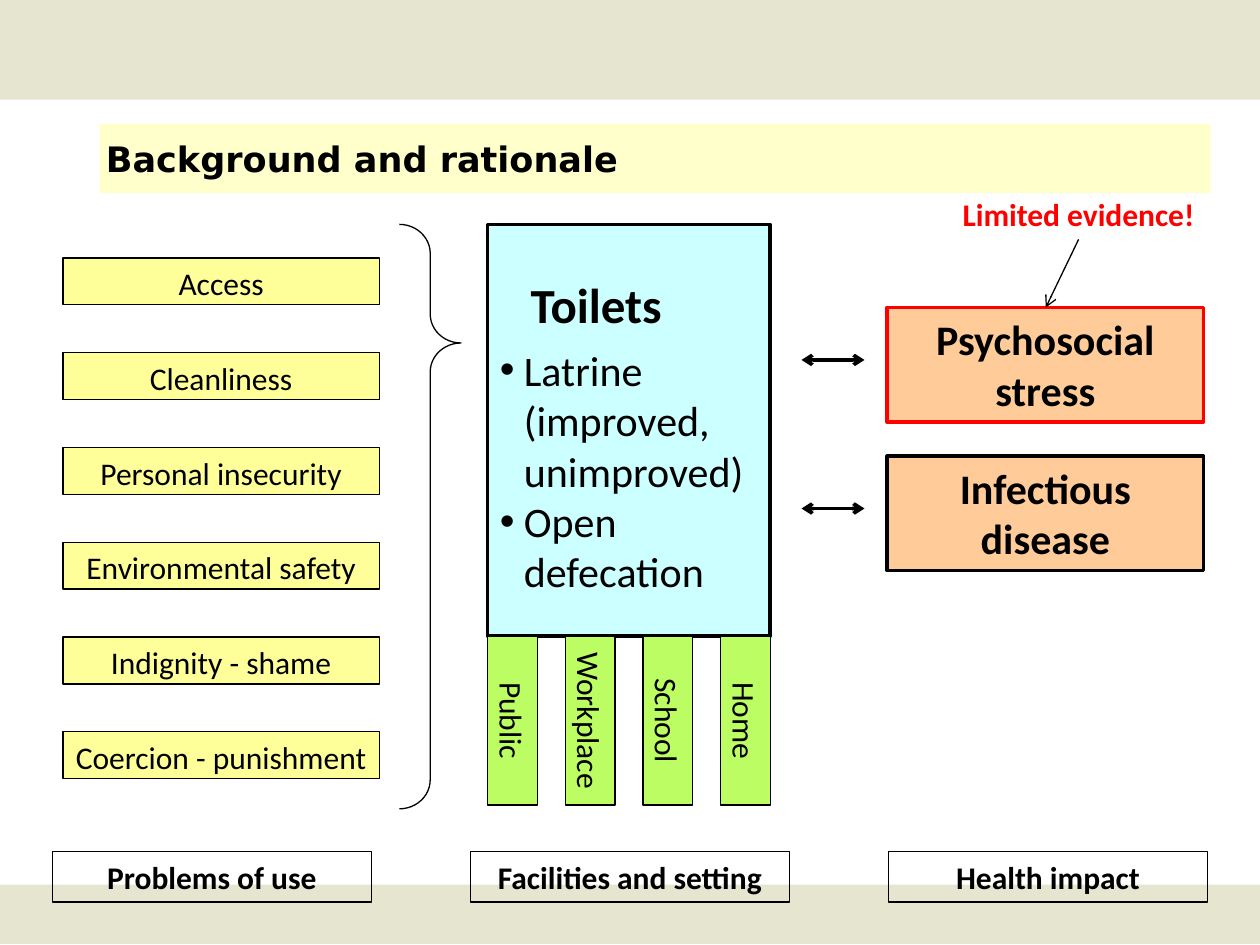
import pptx
import pptx.util
import pptx.dml.color
import pptx.enum.shapes
import pptx.enum.text
import pptx.oxml.ns
import lxml.etree

Pt = pptx.util.Pt
RGBColor = pptx.dml.color.RGBColor
SHAPE = pptx.enum.shapes.MSO_SHAPE
ALIGN = pptx.enum.text.PP_ALIGN
ANCHOR = pptx.enum.text.MSO_ANCHOR
qn = pptx.oxml.ns.qn

BLACK = RGBColor(0x00, 0x00, 0x00)
RED = RGBColor(0xFF, 0x00, 0x00)
BAND = RGBColor(0xE5, 0xE5, 0xD0)
CREAM = RGBColor(0xFF, 0xFF, 0xCC)
YELLOW = RGBColor(0xFF, 0xFF, 0x99)
CYAN = RGBColor(0xCC, 0xFF, 0xFF)
GREEN = RGBColor(0xBB, 0xFD, 0x63)
ORANGE = RGBColor(0xFF, 0xCC, 0x99)


def write(para, text, size=18, bold=False, color=BLACK, font="Calibri",
          align=ALIGN.CENTER, indent=0, bullet=False, after=0):
    """Put formatted text into a paragraph."""
    para.alignment = align
    para.space_after = Pt(after)
    properties = para._p.get_or_add_pPr()
    properties.set("marL", str(Pt(indent)))
    properties.set("indent", str(Pt(-indent if bullet else 0)))
    if bullet:
        lxml.etree.SubElement(properties, qn("a:buFont"), typeface="Arial")
        lxml.etree.SubElement(properties, qn("a:buChar"), char="•")
    span = para.add_run()
    span.text = text
    span.font.name = font
    span.font.size = Pt(size)
    span.font.bold = bold
    span.font.color.rgb = color


def add_panel(page, box, fill=None, line=BLACK, weight=0.75, kind=SHAPE.RECTANGLE):
    shape = page.shapes.add_shape(kind, *map(Pt, box))
    shape.shadow.inherit = False
    if fill is None:
        shape.fill.background()
    else:
        shape.fill.solid()
        shape.fill.fore_color.rgb = fill
    if line is None:
        shape.line.fill.background()
    else:
        shape.line.color.rgb = line
        shape.line.width = Pt(weight)
    return shape


def add_label(page, box, text, fill=None, bold=False):
    shape = add_panel(page, box, fill)
    shape.text_frame.word_wrap = True
    shape.text_frame.vertical_anchor = ANCHOR.TOP
    write(shape.text_frame.paragraphs[0], text, bold=bold)
    return shape


def add_text(page, box, wrap=True):
    frame = page.shapes.add_textbox(*map(Pt, box)).text_frame
    frame.word_wrap = wrap
    return frame


def add_arrow(page, start, end, weight, both=False):
    arrow = page.shapes.add_connector(
        pptx.enum.shapes.MSO_CONNECTOR.STRAIGHT, *map(Pt, start + end))
    arrow.line.color.rgb = BLACK
    arrow.line.width = Pt(weight)
    line = arrow.line._get_or_add_ln()
    for tag in ("a:headEnd", "a:tailEnd") if both else ("a:tailEnd",):
        lxml.etree.SubElement(line, qn(tag), type="arrow")
    lxml.etree.SubElement(arrow._element.spPr, qn("a:effectLst"))


def add_bands(page, width, height):
    add_panel(page, (0, height - 34.4, width, 33.8), BAND, None)
    add_panel(page, (0, 0, width, 56.9), BAND, None)


def add_title(page, box, text):
    title = page.shapes.title
    title.left, title.top, title.width, title.height = map(Pt, box)
    title.fill.solid()
    title.fill.fore_color.rgb = CREAM
    frame = title.text_frame
    frame.auto_size = pptx.enum.text.MSO_AUTO_SIZE.NONE
    frame.vertical_anchor = ANCHOR.MIDDLE
    frame.margin_left = frame.margin_right = Pt(3.6)
    frame.margin_top = frame.margin_bottom = Pt(3.6)
    write(frame.paragraphs[0], text, size=20, bold=True,
          font="DejaVu Sans", align=ALIGN.LEFT)


def add_problems(page, box, names):
    """Evenly spaced labels, gathered by a brace on their right."""
    left, top, width, height = box
    label_height = 26.8
    step = (height - label_height) / (len(names) - 1)
    for index, name in enumerate(names):
        add_label(page, (left, top + index * step, width, label_height), name, YELLOW)
    brace = add_panel(page, (left + width + 11.5, 128.2, 35.3, 334),
                      kind=SHAPE.RIGHT_BRACE)
    brace.adjustments[0] = 0.47
    brace.adjustments[1] = 0.203


def add_facilities(page, box, settings):
    """Toilet panel standing on a row of upright setting labels."""
    left, top, width, height = box
    add_panel(page, box, CYAN, weight=2)
    frame = add_text(page, (left, top + 30, width, height - 54))
    frame.vertical_anchor = ANCHOR.MIDDLE
    write(frame.paragraphs[0], "Toilets", size=28, bold=True,
          align=ALIGN.LEFT, indent=17.5, after=6)
    for item in ("Latrine (improved, unimproved)", "Open defecation"):
        write(frame.add_paragraph(), item, size=24, align=ALIGN.LEFT,
              indent=13.7, bullet=True)

    # Labels are turned a quarter, so their length runs downwards
    length, thickness = 96.5, 28.4
    step = (width - thickness) / (len(settings) - 1)
    middle = top + height + length / 2
    for index, name in enumerate(settings):
        center = left + thickness / 2 + index * step
        label = add_label(page, (center - length / 2, middle - thickness / 2,
                                 length, thickness), name, GREEN)
        label.rotation = 90


def add_impact(page, box, text, line):
    """Outcome panel with a two-way arrow on its left."""
    left, top, width, height = box
    add_panel(page, box, ORANGE, line, 2)
    write(add_text(page, box).paragraphs[0], text, size=24, bold=True)
    level = top + 30
    add_arrow(page, (left - 49, level), (left - 13, level), 2, both=True)


def add_evidence_note(page, box, target):
    left, top, width, height = box
    write(add_text(page, box, wrap=False).paragraphs[0], "Limited evidence!",
          bold=True, color=RED)
    add_arrow(page, (left + width / 2, top + height), target, 0.75)


def add_headings(page, box, names):
    left, top, width, height = box
    label_width = 182.2
    step = (width - label_width) / (len(names) - 1)
    for index, name in enumerate(names):
        add_label(page, (left + index * step, top, label_width, height), name, bold=True)


def main():
    deck = pptx.Presentation()
    deck.slide_width, deck.slide_height = Pt(720), Pt(540)
    page = deck.slides.add_slide(deck.slide_layouts[5])

    add_bands(page, 720, 540)
    add_title(page, (56.9, 70.6, 635, 39.6), "Background and rationale")
    add_problems(page, (36, 147.4, 180.7, 297.6),
                 ("Access", "Cleanliness", "Personal insecurity",
                  "Environmental safety", "Indignity - shame",
                  "Coercion - punishment"))
    add_facilities(page, (278.6, 128.2, 161.5, 235.4),
                   ("Public", "Workplace", "School", "Home"))
    add_impact(page, (507, 175.7, 180.7, 65.5), "Psychosocial stress", RED)
    add_impact(page, (507, 260.6, 180.7, 65.5), "Infectious disease", BLACK)
    add_evidence_note(page, (542.2, 108, 148.3, 28.8), (597.6, 175.7))
    add_headings(page, (30, 486.7, 660, 28.8),
                 ("Problems of use", "Facilities and setting", "Health impact"))

    deck.save("out.pptx")


if __name__ == "__main__":
    main()
